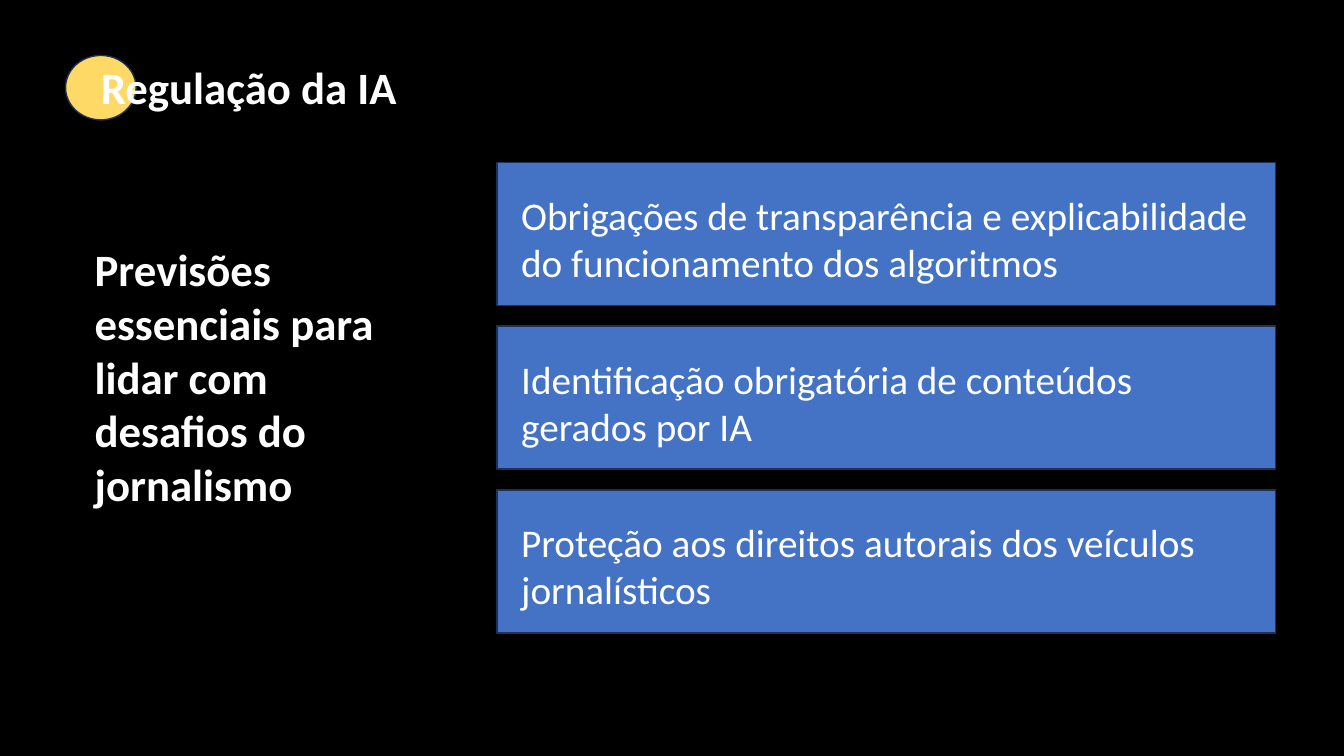
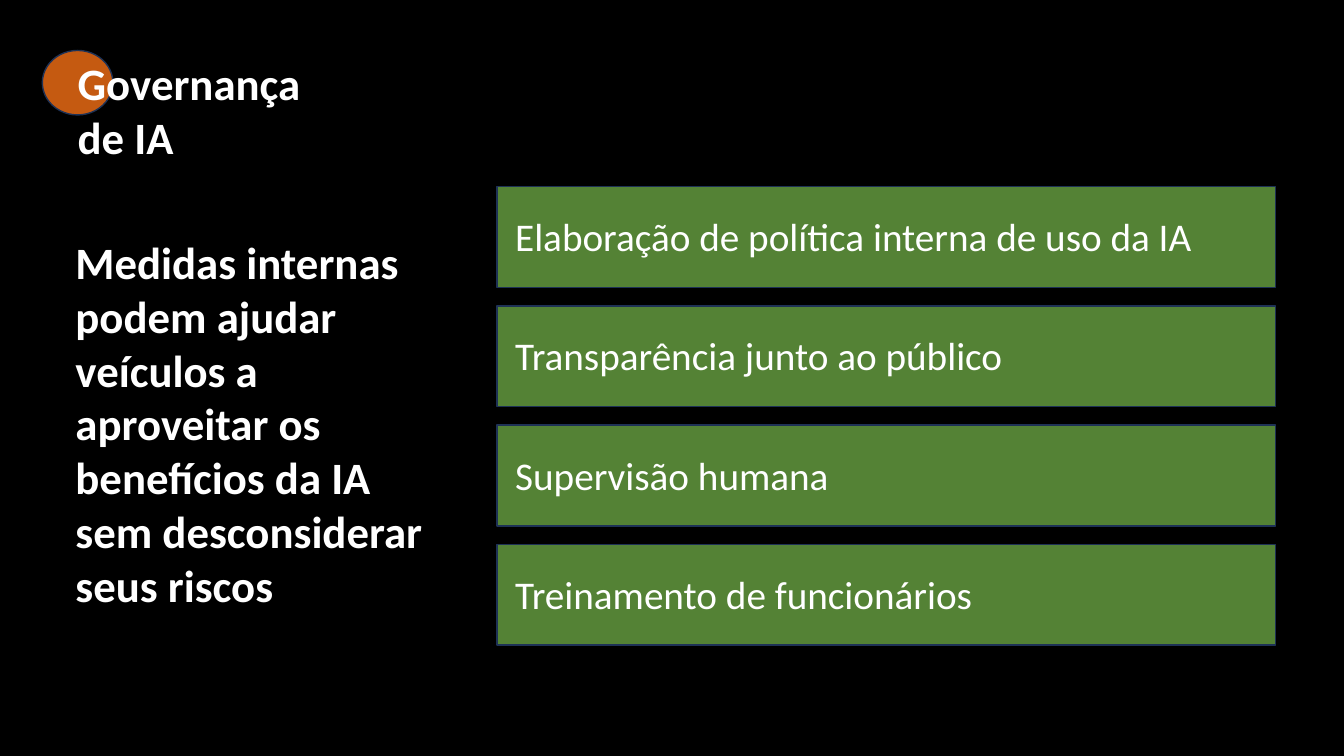
from dataclasses import dataclass

import pptx
import pptx.dml.color
import pptx.enum.shapes
import pptx.enum.text
import pptx.util

# Shared look
SLIDE_WIDTH = pptx.util.Inches(13.33)
SLIDE_HEIGHT = pptx.util.Inches(7.5)
FONT = "Calibri"
BLACK, WHITE, OUTLINE = "000000", "FFFFFF", "1E3256"
YELLOW, ORANGE, BLUE, GREEN = "FFD966", "C55A11", "4472C4", "548235"
HEADING_SIZE, CARD_SIZE = 32, 28
TITLE_ONLY = 5
DOT_WIDTH, DOT_HEIGHT = 5.25, 8.53
CARD_LEFT, CARD_WIDTH = 36.98, 57.92


@dataclass(frozen=True)
class Area:
    """A rectangle in percent of the slide's width and height."""
    left: float
    top: float
    width: float
    height: float


@dataclass(frozen=True)
class CardStack:
    """Equal cards, one under the other, in percent of the slide."""
    texts: tuple[str, ...]
    color: str
    top: float
    height: float
    pitch: float
    inset_x: float
    inset_top: float


@dataclass(frozen=True)
class Topic:
    title: str
    title_area: Area
    dot_color: str
    dot_left: float
    dot_top: float
    message: str
    message_area: Area
    cards: CardStack


TOPICS = (
    Topic(
        "Regulação da IA", Area(6.75, 7.2, 26.11, 8.53), YELLOW, 4.88, 7.33,
        "Previsões essenciais para lidar com desafios do jornalismo",
        Area(6.3, 31.33, 24.76, 37.2),
        CardStack(
            ("Obrigações de transparência e explicabilidade do funcionamento dos algoritmos",
             "Identificação obrigatória de conteúdos gerados por IA",
             "Proteção aos direitos autorais dos veículos jornalísticos"),
            BLUE, top=21.47, height=18.93, pitch=21.67, inset_x=1.8, inset_top=3.8),
    ),
    Topic(
        "Governança de IA", Area(5.03, 6.67, 19.13, 15.73), ORANGE, 3.15, 6.67,
        "Medidas internas podem ajudar veículos a aproveitar os benefícios da IA "
        "sem desconsiderar seus riscos",
        Area(4.88, 30.4, 27.91, 51.6),
        CardStack(
            ("Elaboração de política interna de uso da IA",
             "Transparência junto ao público",
             "Supervisão humana",
             "Treinamento de funcionários"),
            GREEN, top=24.67, height=13.33, pitch=15.78, inset_x=1.35, inset_top=3.4),
    ),
)


# Helpers
def rgb(color: str) -> pptx.dml.color.RGBColor:
    return pptx.dml.color.RGBColor.from_string(color)


def across(percent: float) -> int:
    return round(SLIDE_WIDTH * percent / 100)


def down(percent: float) -> int:
    return round(SLIDE_HEIGHT * percent / 100)


def bounds(area: Area) -> tuple[int, int, int, int]:
    return across(area.left), down(area.top), across(area.width), down(area.height)


def write(box, text: str, size: int, bold: bool = False) -> None:
    frame = box.text_frame
    frame.text = text
    frame.word_wrap = True
    frame.auto_size = pptx.enum.text.MSO_AUTO_SIZE.NONE
    frame.vertical_anchor = pptx.enum.text.MSO_ANCHOR.TOP
    para = frame.paragraphs[0]
    para.alignment = pptx.enum.text.PP_ALIGN.LEFT
    for span in para.runs:
        span.font.name = FONT
        span.font.size = pptx.util.Pt(size)
        span.font.bold = bold
        span.font.color.rgb = rgb(WHITE)


def add_outlined(page, kind, area: Area, color: str):
    shape = page.shapes.add_shape(kind, *bounds(area))
    shape.shadow.inherit = False
    shape.fill.solid()
    shape.fill.fore_color.rgb = rgb(color)
    shape.line.color.rgb = rgb(OUTLINE)
    shape.line.width = pptx.util.Pt(1)
    return shape


# Slide parts
def add_title(page, topic: Topic) -> None:
    title = page.shapes.title
    title.left, title.top, title.width, title.height = bounds(topic.title_area)
    write(title, topic.title, HEADING_SIZE, bold=True)
    dot = add_outlined(page, pptx.enum.shapes.MSO_SHAPE.OVAL,
                       Area(topic.dot_left, topic.dot_top, DOT_WIDTH, DOT_HEIGHT),
                       topic.dot_color)
    # The dot sits behind the title
    title.element.addprevious(dot.element)


def add_message(page, topic: Topic) -> None:
    box = page.shapes.add_textbox(*bounds(topic.message_area))
    write(box, topic.message, HEADING_SIZE, bold=True)


def add_cards(page, stack: CardStack) -> None:
    for row, text in enumerate(stack.texts):
        area = Area(CARD_LEFT, stack.top + row * stack.pitch, CARD_WIDTH, stack.height)
        card = add_outlined(page, pptx.enum.shapes.MSO_SHAPE.RECTANGLE, area, stack.color)
        write(card, text, CARD_SIZE)
        frame = card.text_frame
        frame.margin_left = frame.margin_right = across(stack.inset_x)
        frame.margin_top = down(stack.inset_top)
        frame.margin_bottom = 0


def add_topic(deck, topic: Topic) -> None:
    page = deck.slides.add_slide(deck.slide_layouts[TITLE_ONLY])
    page.background.fill.solid()
    page.background.fill.fore_color.rgb = rgb(BLACK)
    add_title(page, topic)
    add_message(page, topic)
    add_cards(page, topic.cards)


def main() -> None:
    deck = pptx.Presentation()
    deck.slide_width = SLIDE_WIDTH
    deck.slide_height = SLIDE_HEIGHT
    for topic in TOPICS:
        add_topic(deck, topic)
    deck.save("out.pptx")


if __name__ == "__main__":
    main()
